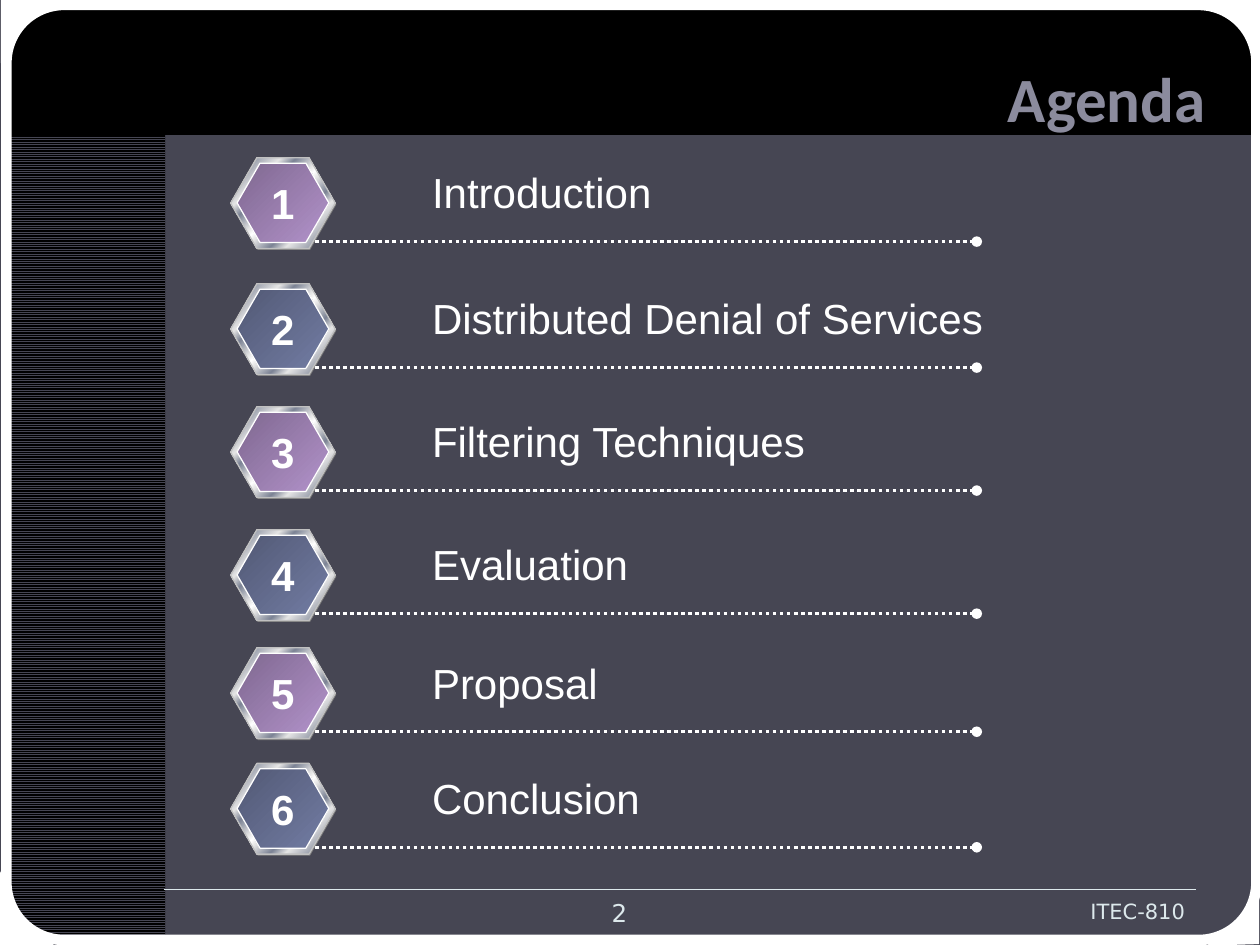
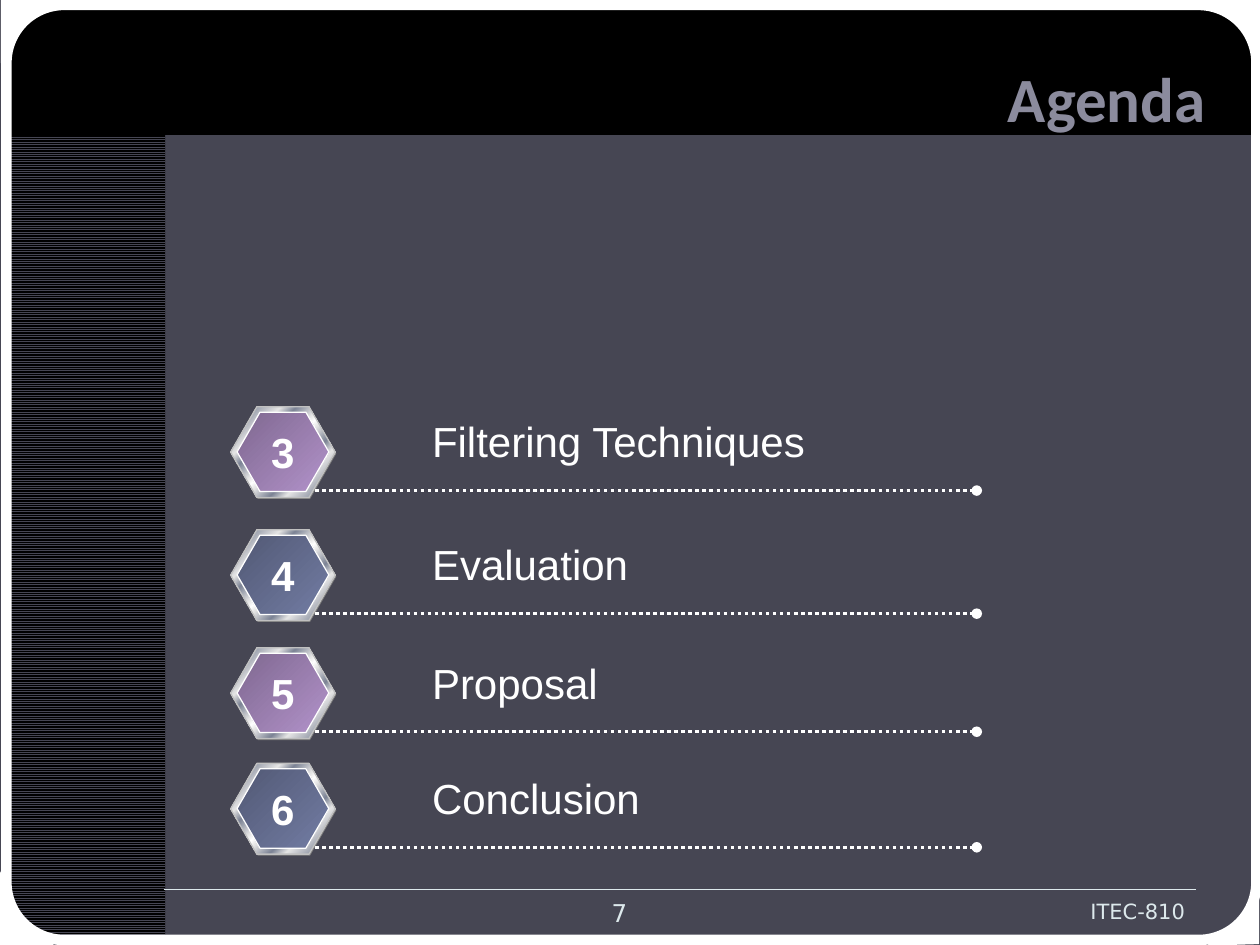
"""Build two agenda slides with numbered hexagons on a shared dark frame."""
from lxml import etree
from pptx import Presentation
from pptx.dml.color import RGBColor
from pptx.enum import dml, shapes, text
from pptx.oxml.ns import qn
from pptx.util import Cm, Pt

HUES = {
    "back": "464653", "band": "000000", "white": "FFFFFF", "pale": "DDE9EC",
    "title": "8B8B9D", "shade": "808080", "rim": "C0C0C0",
}
STEEL = [
    (0, "E6E6E6"), (8, "7D8496"), (26, "E6E6E6"), (34, "7D8496"),
    (46, "E6E6E6"), (50, "FFFFFF"), (54, "E6E6E6"), (66, "7D8496"),
    (74, "E6E6E6"), (92, "7D8496"), (100, "E6E6E6"),
]
PLUM = [(0, "7F6890"), (100, "B292CA")]
BLUE = [(0, "525975"), (100, "727CA3")]
CORNERS = [
    [(.03, .15), (.03, 1.27), (.38, .64), (.74, .15), (1.3, 0), (.03, 0)],
    [(.13, 19.05), (1.07, 19.05), (.53, 18.62), (.13, 18.21), (0, 17.58), (0, 19.05)],
    [(25.37, 18.87), (25.37, 17.78), (25.07, 18.42), (24.79, 18.87), (24.36, 19.05),
     (25.37, 19.02)],
    [(25.25, 0), (24.16, 0), (24.79, .36), (25.25, .74), (25.43, 1.27), (25.43, 0)],
]
TOPICS = [
    ("Introduction", 3.18, 4.98),
    ("Distributed Denial of Services", 5.72, 11.73),
    ("Filtering Techniques", 8.2, 8.1),
    ("Evaluation", 10.68, 4.52),
    ("Proposal", 13.06, 3.89),
    ("Conclusion", 15.39, 4.75),
]
KIND = shapes.MSO_SHAPE
LINE = shapes.MSO_CONNECTOR.STRAIGHT
SIDE = text.PP_ALIGN


def write(box, words, size=24, font="Arial", hue="white", bold=False,
          align=SIDE.LEFT, wrap=True, anchor=text.MSO_ANCHOR.TOP):
    frame = box.text_frame
    frame.word_wrap = wrap
    frame.vertical_anchor = anchor
    para = frame.paragraphs[0]
    para.alignment = align
    run = para.add_run()
    run.text = words
    run.font.size = Pt(size)
    run.font.name = font
    run.font.bold = bold
    run.font.color.rgb = RGBColor.from_string(HUES[hue])


def paint(item, fill=None, edge=None, width=.75):
    props = item._element.spPr
    if isinstance(fill, list):
        item.fill.gradient()
        item.fill.gradient_angle = 315
        stops = props.find(".//" + qn("a:gsLst"))
        stops.clear()
        for place, tone in fill:
            stop = etree.SubElement(stops, qn("a:gs"), pos=str(place * 1000))
            etree.SubElement(stop, qn("a:srgbClr"), val=tone)
    elif fill:
        item.fill.solid()
        item.fill.fore_color.rgb = RGBColor.from_string(HUES[fill])
    elif hasattr(item, "fill"):
        item.fill.background()
    if edge:
        item.line.color.rgb = RGBColor.from_string(HUES[edge])
        item.line.width = Pt(width)
    else:
        item.line.fill.background()
    etree.SubElement(props, qn("a:effectLst"))


deck = Presentation()
deck.slide_width, deck.slide_height = Cm(25.4), Cm(19.05)
plan = deck.slide_layouts[5]
plan.background.fill.solid()
plan.background.fill.fore_color.rgb = RGBColor.from_string(HUES["back"])
for spare in list(plan.placeholders)[1:]:
    spare._element.getparent().remove(spare._element)

pages = [deck.slides.add_slide(plan) for _ in range(2)]
draw = pages[0].shapes
band = draw.add_shape(KIND.RECTANGLE, Cm(.13), Cm(.15), Cm(25.25), Cm(2.57))
paint(band, "band")
strip = draw.add_shape(KIND.RECTANGLE, Cm(.03), Cm(2.72), Cm(3.3), Cm(16.36))
paint(strip)
strip.fill.patterned()
strip.fill.pattern = dml.MSO_PATTERN.NARROW_HORIZONTAL
strip.fill.fore_color.rgb = RGBColor.from_string(HUES["back"])
strip.fill.back_color.rgb = RGBColor.from_string(HUES["band"])
border = draw.add_shape(KIND.ROUNDED_RECTANGLE, Cm(.13), Cm(.1), Cm(25.2), Cm(18.85))
border.adjustments[0] = .062
paint(border, edge="white", width=6)
parts = [band, strip, border]
for spots in CORNERS:
    dots = [(Cm(x), Cm(y)) for x, y in spots]
    path = draw.build_freeform(*dots[0], scale=1.0)
    path.add_line_segments(dots[1:], close=True)
    corner = path.convert_to_shape()
    paint(corner, "white", "white")
    parts.append(corner)
rule = draw.add_connector(LINE, Cm(3.3), Cm(17.93), Cm(24.1), Cm(17.93))
paint(rule, edge="pale")
parts.append(rule)
for part in parts:
    plan.shapes._spTree.append(part._element)

for page, number, first in zip(pages, ("2", "7"), (1, 3)):
    title = page.shapes.title
    title.left, title.top, title.width, title.height = Cm(3.81), Cm(.97), Cm(20.75), Cm(1.98)
    write(title, "Agenda", size=36, font="Calibri", hue="title", bold=True,
          align=SIDE.RIGHT, anchor=text.MSO_ANCHOR.MIDDLE)

    for rank, (topic, top, width) in enumerate(TOPICS[first - 1:], first):
        row = page.shapes.add_group_shape().shapes
        core = PLUM if rank % 2 else BLUE
        for x, y, w, h, fill, edge in (
            (4.67, .03, 2.11, 1.83, "shade", None),
            (4.65, 0, 2.11, 1.83, STEEL, "rim"),
            (4.78, .11, 1.85, 1.6, core, "white"),
        ):
            hexa = row.add_shape(KIND.HEXAGON, Cm(x), Cm(top + y), Cm(w), Cm(h))
            hexa.adjustments[0] = .289
            paint(hexa, fill, edge)
        level = Cm(top + 1.69)
        lead = row.add_connector(LINE, Cm(6.35), level, Cm(19.69), level)
        paint(lead, edge="white", width=2)
        lead.line.dash_style = dml.MSO_LINE.ROUND_DOT
        etree.SubElement(lead.line._get_or_add_ln(), qn("a:tailEnd"), type="oval")
        label = row.add_textbox(Cm(8.46), Cm(top + .06), Cm(width), Cm(1.3))
        write(label, topic, wrap=False)
        digit = row.add_textbox(Cm(5.2), Cm(top + .28), Cm(1), Cm(1.28))
        write(digit, str(rank), bold=True, align=SIDE.CENTER, wrap=False)

    code = page.shapes.add_textbox(Cm(18.42), Cm(17.98), Cm(5.72), Cm(.84))
    write(code, "ITEC-810", size=12, font="DejaVu Sans", hue="pale", align=SIDE.RIGHT)
    count = page.shapes.add_textbox(Cm(9.53), Cm(17.98), Cm(5.92), Cm(.86))
    write(count, number, size=14, font="DejaVu Sans", hue="pale", align=SIDE.CENTER)

deck.save("out.pptx")
